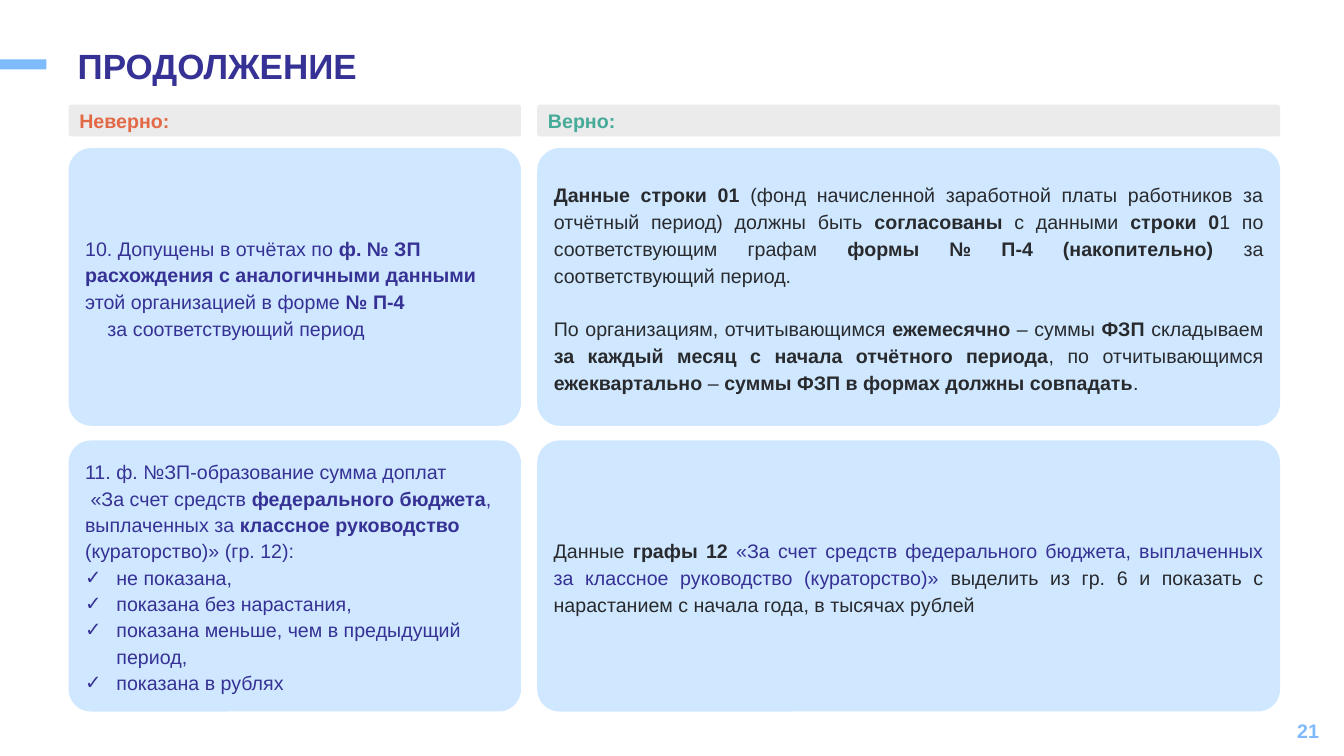
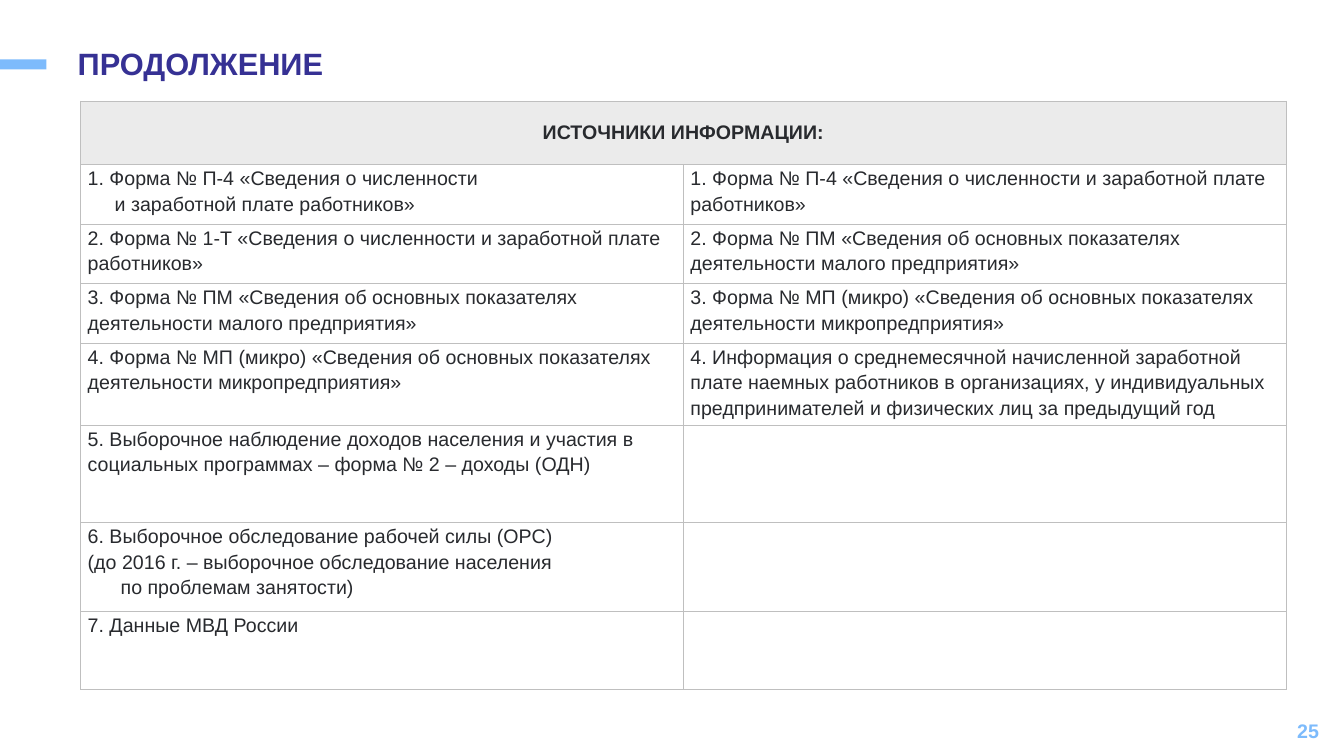
from dataclasses import dataclass
from typing import NamedTuple

from lxml.etree import SubElement
from pptx import Presentation
from pptx.dml.color import RGBColor as RGB
from pptx.enum.shapes import MSO_SHAPE as Shape
from pptx.enum.text import MSO_ANCHOR as Anchor, PP_ALIGN as Align
from pptx.oxml import parse_xml
from pptx.oxml.ns import nsdecls, qn
from pptx.util import Cm, Pt


@dataclass(frozen=True)
class Theme:
    font: str = "Arial"
    body: float = 14
    accent: str = "7DBBFC"
    title: str = "363194"
    ink: str = "282A2E"
    wrong: str = "E36846"
    right: str = "46AA98"
    band: str = "EBEBEB"
    card: str = "CFE8FF"
    border: str = "BFBFBF"
    border_pt: float = 0.5
    corner: float = 0.082


T = Theme()


class Run(NamedTuple):
    text: str
    bold: bool = False
    color: str = ""


@dataclass(frozen=True)
class Para:
    runs: tuple[Run, ...]
    align: Align = Align.LEFT
    left: float = 0      # cm
    first: float = 0     # cm
    before: float = 0    # pt
    bullet: str = ""


@dataclass(frozen=True)
class Card:
    col: int
    row: int
    color: str
    spacing: float
    paras: tuple[Para, ...]


def para(*parts: str | Run, **style) -> Para:
    """Plain strings become regular runs."""
    return Para(tuple(x if isinstance(x, Run) else Run(x) for x in parts), **style)


def b(text: str) -> Run:
    return Run(text, bold=True)


# Text
def fill_text(tf, paras: tuple[Para, ...], color: str, size: float = T.body,
              spacing: float = 1.0) -> None:
    tf.word_wrap = True
    for i, item in enumerate(paras):
        p = tf.paragraphs[0] if i == 0 else tf.add_paragraph()
        ppr = p._p.get_or_add_pPr()
        if item.left or item.first:
            ppr.set("marL", str(Cm(item.left)))
            ppr.set("indent", str(Cm(item.first)))
        p.alignment = item.align
        p.line_spacing = spacing
        if item.before:
            p.space_before = Pt(item.before)
        if item.bullet:
            SubElement(ppr, qn("a:buFont")).set("typeface", T.font)
            SubElement(ppr, qn("a:buChar")).set("char", item.bullet)
        for run in item.runs:
            r = p.add_run()
            r.text = run.text
            r.font.name = T.font
            r.font.size = Pt(size)
            r.font.bold = run.bold
            r.font.color.rgb = RGB.from_string(run.color or color)


def add_label(slide, box: tuple[float, ...], item: Para, color: str, size: float,
              anchor: Anchor, spacing: float = 1.0) -> None:
    tf = slide.shapes.add_textbox(*map(Cm, box)).text_frame
    tf.margin_left = tf.margin_right = Cm(0.28)
    tf.margin_top = tf.margin_bottom = Cm(0.15)
    tf.vertical_anchor = anchor
    fill_text(tf, (item,), color, size, spacing)


# Shapes
def add_box(slide, kind: Shape, box: tuple[float, ...], fill: str):
    sp = slide.shapes.add_shape(kind, *map(Cm, box))
    sp.shadow.inherit = False
    sp.fill.solid()
    sp.fill.fore_color.rgb = RGB.from_string(fill)
    sp.line.fill.background()
    return sp


def add_panel(slide, box: tuple[float, ...], fill: str, paras: tuple[Para, ...],
              color: str, spacing: float = 1.0) -> None:
    sp = add_box(slide, Shape.ROUNDED_RECTANGLE, box, fill)
    sp.adjustments[0] = T.corner
    sp.text_frame.vertical_anchor = Anchor.MIDDLE
    fill_text(sp.text_frame, paras, color, spacing=spacing)


# Shared frame of every slide
def new_slide(prs, title: str, title_size: float, number: int):
    slide = prs.slides.add_slide(prs.slide_layouts[6])
    add_box(slide, Shape.RECTANGLE, (0, 1.5, 1.17, 0.25), T.accent)
    add_label(slide, (25.9, 17.9, 7.62, 1.02), para(b(str(number)), align=Align.RIGHT),
              T.accent, T.body, Anchor.MIDDLE)
    add_label(slide, (1.68, 1.09, 22.5, 1.45), para(b(title)),
              T.title, title_size, Anchor.TOP, 0.9)
    return slide


# Slide with wrong and right columns
COLUMNS = ((1.73, 11.4), (13.54, 18.72))   # left, width
ROWS = ((3.73, 7.0), (11.1, 6.83))         # top, height
HEADS = (("Неверно:", T.wrong), ("Верно:", T.right))
JUST = Align.JUSTIFY
CHECKS = ("не показана,", "показана без нарастания,",
          "показана меньше, чем в предыдущий период,", "показана в рублях")

CARDS = (
    Card(0, 0, T.title, 1.14, (
        para("10. Допущены в отчётах по ",
             b("ф. № ЗП расхождения с аналогичными данными "),
             "этой организацией в форме ", b("№ П-4")),
        para("за соответствующий период", left=0.56),
    )),
    Card(1, 0, T.ink, 1.14, (
        para(b("Данные строки 01 "),
             "(фонд начисленной заработной платы работников за отчётный период) должны быть ",
             b("согласованы "), "с данными ", b("строки 0"),
             "1 по соответствующим графам ", b("формы № П-4 (накопительно) "),
             "за соответствующий период.", align=JUST),
        para("По организациям, отчитывающимся", b(" ежемесячно "), "– суммы ",
             b("ФЗП "), "складываем ",
             b("за каждый месяц с начала отчётного периода"),
             ", по отчитывающимся ", b("ежеквартально"), " – ",
             b("суммы ФЗП в формах должны совпадать"), ".", align=JUST, before=19),
    )),
    Card(0, 1, T.title, 1.12, (
        para("11. ф. №ЗП-образование сумма доплат"),
        para("«За счет средств ", b("федерального бюджета"), ", выплаченных за ",
             b("классное руководство "), "(кураторство)» (гр. 12):", first=0.14),
        *(para(text, left=0.79, first=-0.79, bullet="✓") for text in CHECKS),
    )),
    Card(1, 1, T.ink, 1.14, (
        para("Данные ", b("графы 12 "),
             Run("«За счет средств федерального бюджета, выплаченных за классное "
                 "руководство (кураторство)» ", color=T.title),
             "выделить из гр. 6 и показать с нарастанием с начала года, в тысячах рублей",
             align=JUST),
    )),
)


def build_comparison(prs) -> None:
    slide = new_slide(prs, "ПРОДОЛЖЕНИЕ", 25, 21)
    for (left, width), (text, color) in zip(COLUMNS, HEADS):
        add_panel(slide, (left, 2.64, width, 0.8), T.band, (para(b(text)),), color)
    for card in CARDS:
        (left, width), (top, height) = COLUMNS[card.col], ROWS[card.row]
        add_panel(slide, (left, top, width, height), T.card, card.paras,
                  card.color, card.spacing)


# Slide with the table of sources
COL_WIDTH = 15.19
ROW_HEIGHTS = (1.6, 1.5, 1.5, 1.5, 2.06, 2.46, 2.24, 1.96)
P4 = "Форма № П-4 «Сведения о численности и заработной плате работников»"
PM = "Форма № ПМ «Сведения об основных показателях деятельности малого предприятия»"
MICRO = "Форма № МП (микро) «Сведения об основных показателях деятельности микропредприятия»"

SOURCES = (
    (
        (para("1. Форма № П-4 «Сведения о численности"),
         para("и заработной плате работников»", left=0.68)),
        (para("2. Форма № 1-Т «Сведения о численности и заработной плате работников»"),),
        (para(f"3. {PM}"),),
        (para(f"4. {MICRO}"),),
        (para("5. Выборочное наблюдение доходов населения и участия в "
              "социальных программах – форма № 2 – доходы (ОДН)"),),
        (para("6. Выборочное обследование рабочей силы (ОРС)"),
         para("(до 2016 г. – выборочное обследование населения"),
         para("по проблемам занятости)", left=0.83)),
        (para("7. Данные МВД России"),),
    ),
    (
        (para(f"1. {P4}"),),
        (para(f"2. {PM}"),),
        (para(f"3. {MICRO}"),),
        (para("4. Информация о среднемесячной начисленной заработной плате наемных "
              "работников в организациях, у индивидуальных предпринимателей "
              "и физических лиц за предыдущий год"),),
    ),
)


def style_cell(cell, fill: str = "") -> None:
    cell.margin_left = cell.margin_right = Cm(0.18)
    cell.margin_top = cell.margin_bottom = 0
    if fill:
        cell.fill.solid()
        cell.fill.fore_color.rgb = RGB.from_string(fill)
    else:
        cell.fill.background()
    tcpr = cell._tc.get_or_add_tcPr()
    for i, side in enumerate("LRTB"):
        tcpr.insert(i, parse_xml(
            f'<a:ln{side} {nsdecls("a")} w="{Pt(T.border_pt)}"><a:solidFill>'
            f'<a:srgbClr val="{T.border}"/></a:solidFill></a:ln{side}>'))


def build_sources(prs) -> None:
    slide = new_slide(prs, "ПРОДОЛЖЕНИЕ", 22, 25)
    table = slide.shapes.add_table(
        len(ROW_HEIGHTS), len(SOURCES), Cm(2.03), Cm(2.55),
        Cm(COL_WIDTH * len(SOURCES)), Cm(sum(ROW_HEIGHTS))).table
    table.first_row = table.horz_banding = False
    for column in table.columns:
        column.width = Cm(COL_WIDTH)
    for i, (row, height) in enumerate(zip(table.rows, ROW_HEIGHTS)):
        row.height = Cm(height)
        for cell in row.cells:
            style_cell(cell, T.band if i == 0 else "")

    # Header across both columns
    head = table.cell(0, 0)
    head.merge(table.cell(0, 1))
    head.vertical_anchor = Anchor.MIDDLE
    fill_text(head.text_frame, (para(b("ИСТОЧНИКИ ИНФОРМАЦИИ:"), align=Align.CENTER),), T.ink)

    for c, column in enumerate(SOURCES):
        for i, paras in enumerate(column, start=1):
            fill_text(table.cell(i, c).text_frame, paras, T.ink, spacing=1.15)


def main() -> None:
    prs = Presentation()
    prs.slide_width, prs.slide_height = Cm(33.87), Cm(19.05)
    build_comparison(prs)
    build_sources(prs)
    prs.save("out.pptx")


if __name__ == "__main__":
    main()
